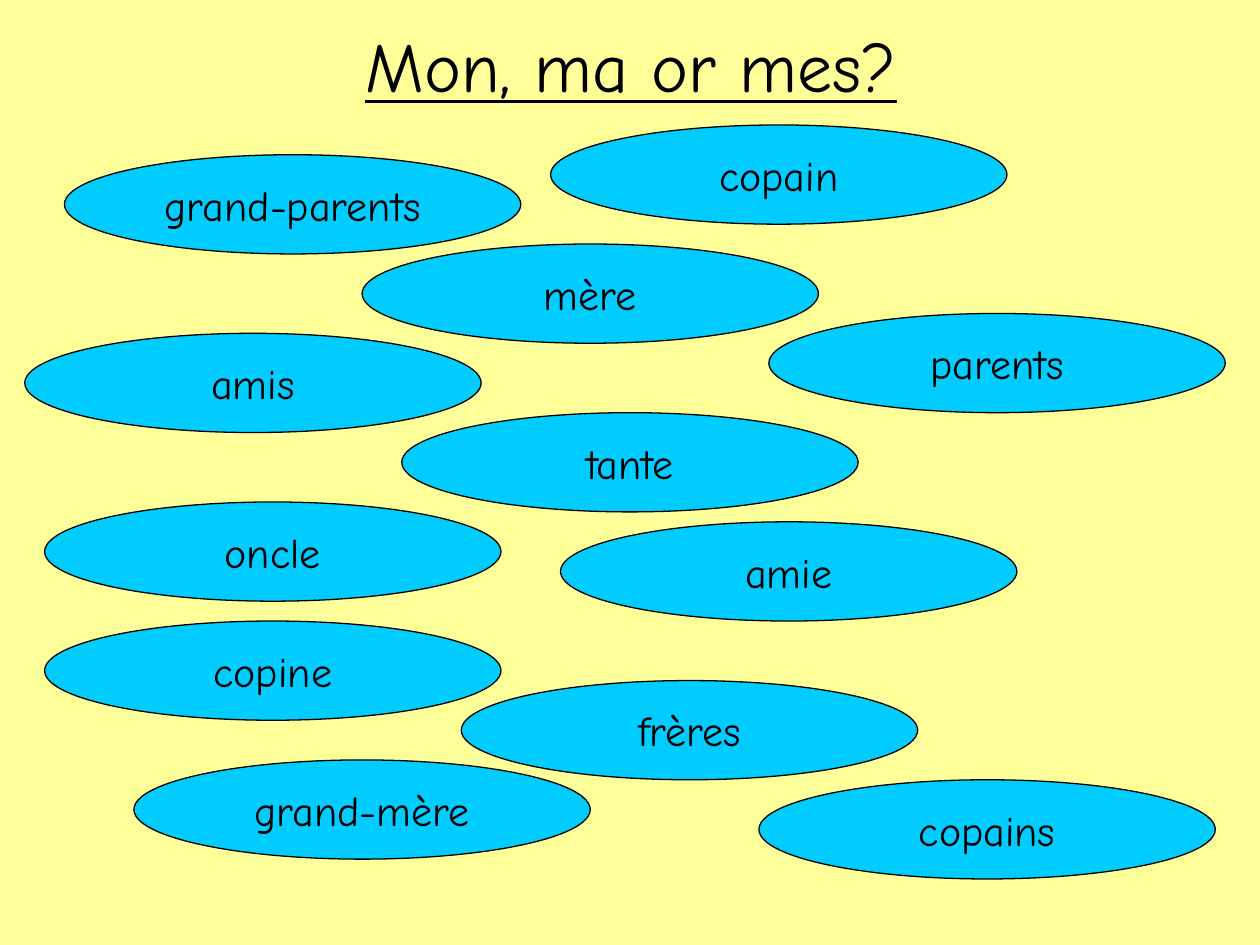
from pptx import Presentation
from pptx.dml.color import RGBColor
from pptx.enum.shapes import MSO_SHAPE as SHAPE
from pptx.enum.text import MSO_ANCHOR as ANCHOR, MSO_AUTO_SIZE as AUTO, PP_ALIGN as ALIGN
from pptx.util import Inches, Pt

TITLE = "Mon, ma or mes?"
# word, column and row of the oval's top-left corner on the grid
WORDS = [
    ("grand-parents", 6, 15),
    ("copain", 55, 12),
    ("mère", 36, 24),
    ("amis", 2, 33),
    ("parents", 77, 31),
    ("tante", 40, 41),
    ("oncle", 4, 50),
    ("amie", 56, 52),
    ("copine", 4, 62),
    ("frères", 46, 68),
    ("grand-mère", 13, 76),
    ("copains", 76, 78),
]
COLORS = {"background": "FFFF99", "oval": "00CCFF", "ink": "000000"}
FONT = "Comic Neue"

WIDTH, HEIGHT = 10, 7.5
CELL = WIDTH / 127              # 2 mm grid
LEFT, TOP = 0.5 * CELL, 0.6 * CELL
OVAL_COLS, OVAL_ROWS = 46, 10


def color(name):
    return RGBColor.from_string(COLORS[name])


def write(sp, text, size, underline=None, wrap=True):
    tf = sp.text_frame
    tf.auto_size = AUTO.NONE
    tf.word_wrap = wrap
    tf.vertical_anchor = ANCHOR.MIDDLE
    p = tf.paragraphs[0]
    p.alignment = ALIGN.CENTER
    r = p.add_run()
    r.text = text
    r.font.name = FONT
    r.font.size = Pt(size)
    r.font.underline = underline
    r.font.color.rgb = color("ink")


def add_oval(slide, word, col, row):
    sp = slide.shapes.add_shape(
        SHAPE.OVAL, Inches(LEFT + col * CELL), Inches(TOP + row * CELL),
        Inches(OVAL_COLS * CELL), Inches(OVAL_ROWS * CELL))
    sp.shadow.inherit = False
    sp.fill.solid()
    sp.fill.fore_color.rgb = color("oval")
    sp.line.color.rgb = color("ink")
    sp.line.width = Pt(0.75)
    write(sp, word, 24, wrap=False)


def main():
    prs = Presentation()
    prs.slide_width, prs.slide_height = Inches(WIDTH), Inches(HEIGHT)
    slide = prs.slides.add_slide(prs.slide_layouts[5])
    slide.background.fill.solid()
    slide.background.fill.fore_color.rgb = color("background")

    title = slide.shapes.title
    title.left, title.top = Inches(0.51), Inches(0.21)
    title.width, title.height = Inches(0.9 * WIDTH), Inches(0.61)
    write(title, TITLE, 40, underline=True)

    for word, col, row in WORDS:
        add_oval(slide, word, col, row)
    prs.save("out.pptx")


if __name__ == "__main__":
    main()
